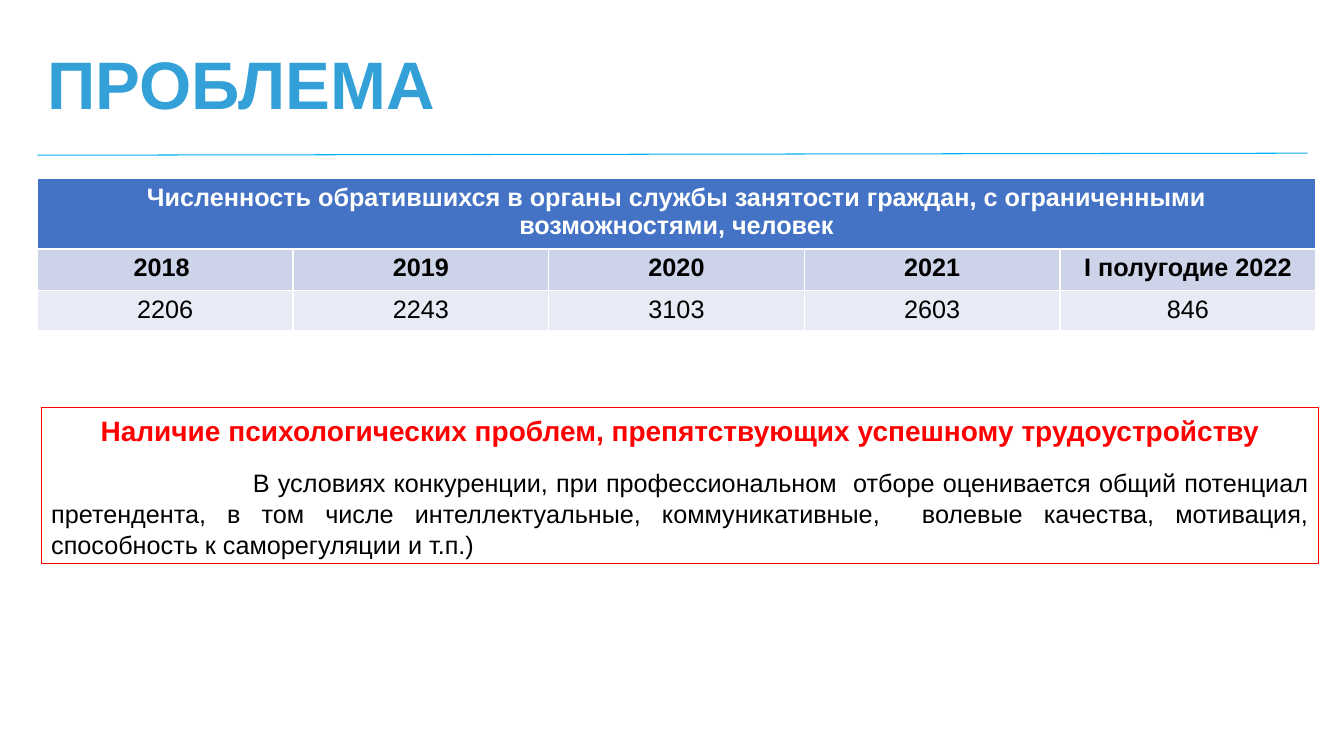
from lxml.etree import SubElement
from pptx import Presentation
from pptx.dml.color import RGBColor
from pptx.enum.shapes import MSO_CONNECTOR, MSO_SHAPE
from pptx.enum.text import MSO_ANCHOR, PP_ALIGN
from pptx.oxml.ns import qn
from pptx.util import Inches, Pt


def color(hex_value):
    return RGBColor.from_string(hex_value)


def write(paragraph, text, size, hex_value, bold=False, **paragraph_format):
    """Add one Arial run and apply the paragraph's format values."""
    run = paragraph.add_run()
    run.text = text
    run.font.color.rgb = color(hex_value)
    for name, value in {"name": "Arial", "size": Pt(size), "bold": bold}.items():
        setattr(run.font, name, value)
    for name, value in paragraph_format.items():
        setattr(paragraph, name, value)


presentation = Presentation()
presentation.slide_width = Inches(13.33)
presentation.slide_height = Inches(7.5)
slide = presentation.slides.add_slide(presentation.slide_layouts[6])

# Title and rule
title = slide.shapes.add_textbox(Inches(0.37), Inches(0.49), Inches(11.1), Inches(0.79))
title.text_frame.word_wrap = True
title.text_frame.vertical_anchor = MSO_ANCHOR.BOTTOM
write(title.text_frame.paragraphs[0], "ПРОБЛЕМА", 48, "33A1D8", True, line_spacing=0.9)

title_rule = slide.shapes.add_connector(
    MSO_CONNECTOR.STRAIGHT, Inches(0.37), Inches(1.54), Inches(12.97), Inches(1.52))
title_rule.line.color.rgb = color("00B0F0")
title_rule.line.width = Pt(0.75)
SubElement(title_rule._element.spPr, qn("a:effectLst"))

# Applicants by year; the default table style draws the white borders
header = ("Численность обратившихся в органы службы занятости граждан, "
          "с ограниченными возможностями, человек")
applicants = {"2018 ": 2206, "2019": 2243, "2020": 3103, "2021": 2603, "I полугодие 2022": 846}
rows = [
    ([header], 0.69, "4472C4", "FFFFFF", True),
    (applicants.keys(), 0.41, "CDD4EA", "000000", True),
    (applicants.values(), 0.4, "E8EBF5", "000000", False),
]
table = slide.shapes.add_table(
    len(rows), len(applicants), Inches(0.37), Inches(1.77), Inches(12.68), Inches(1.5)).table
table.cell(0, 0).merge(table.cell(0, len(applicants) - 1))
for row_index, (values, height, fill, text_color, bold) in enumerate(rows):
    table.rows[row_index].height = Inches(height)
    for cell in table.rows[row_index].cells:
        cell.fill.solid()
        cell.fill.fore_color.rgb = color(fill)
    for column_index, value in enumerate(values):
        paragraph = table.cell(row_index, column_index).text_frame.paragraphs[0]
        write(paragraph, str(value), 18, text_color, bold, alignment=PP_ALIGN.CENTER)

# Problem statement
problem = slide.shapes.add_shape(
    MSO_SHAPE.RECTANGLE, Inches(0.41), Inches(4.04), Inches(12.67), Inches(1.55))
problem.shadow.inherit = False
problem.fill.background()
problem.line.color.rgb = color("FF0000")
problem.line.width = Pt(0.75)
frame = problem.text_frame
frame.word_wrap = True
frame.vertical_anchor = MSO_ANCHOR.TOP
write(frame.paragraphs[0],
      "Наличие психологических проблем, препятствующих успешному трудоустройству",
      20, "FF0000", True, alignment=PP_ALIGN.CENTER, line_spacing=1.03)
explanation = frame.add_paragraph()
write(explanation,
      "В условиях конкуренции, при профессиональном  отборе оценивается общий потенциал "
      "претендента, в том числе интеллектуальные, коммуникативные,  волевые качества, "
      "мотивация, способность к саморегуляции и т.п.)",
      18, "000000", alignment=PP_ALIGN.JUSTIFY, line_spacing=1.03, space_before=Pt(14))
explanation._p.get_or_add_pPr().set("indent", str(Inches(2)))

presentation.save("out.pptx")
